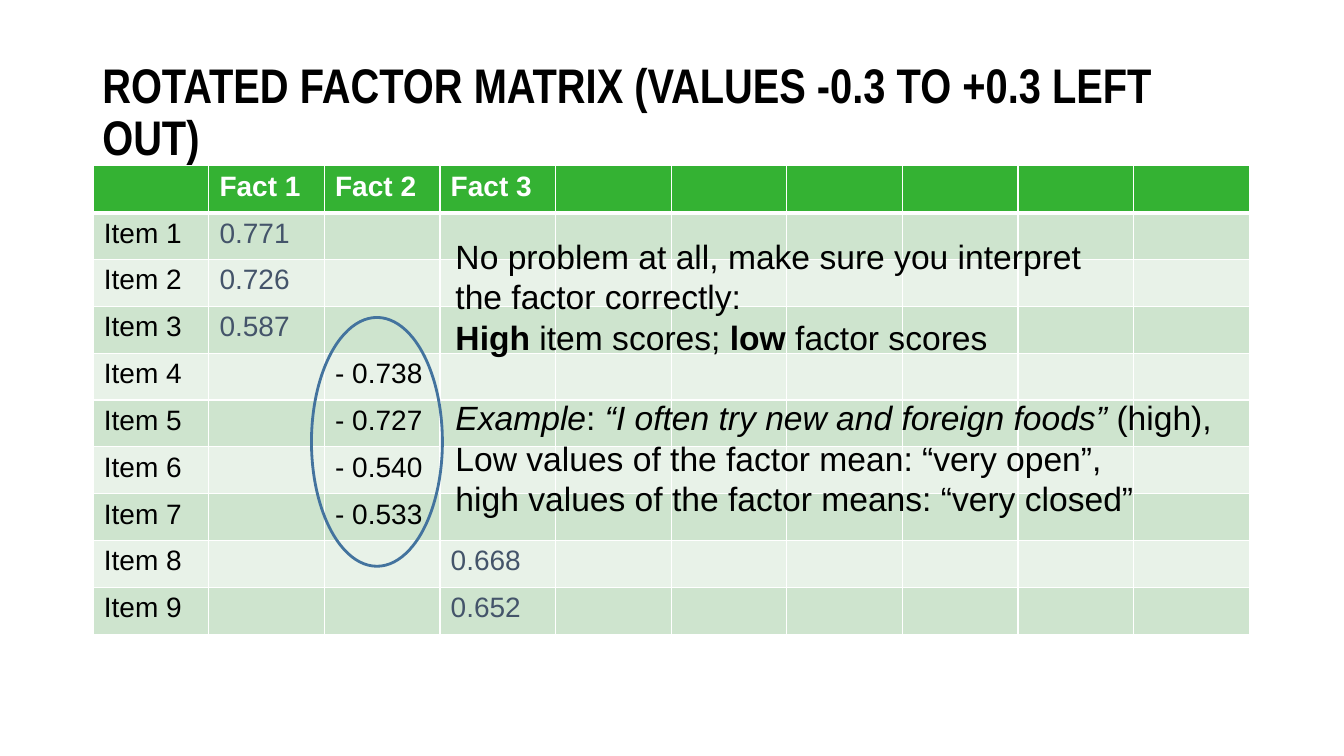
"""Builds the slide on a rotated factor matrix with a note on reading it."""
from lxml.etree import SubElement as Sub
from pptx import Presentation
from pptx.dml.color import RGBColor as RGB
from pptx.enum.shapes import MSO_SHAPE as Shape
from pptx.enum.text import MSO_ANCHOR as Anchor
from pptx.oxml import parse_xml
from pptx.oxml.ns import nsdecls, qn
from pptx.util import Cm, Pt

hues = {"black": "000000", "white": "FFFFFF", "head": "34B233", "odd": "CEE4CE",
        "even": "E8F2E8", "slate": "44546A", "ring": "43739E"}


def style(font, size, hue, bold=None, name="Arial"):
    font.size, font.bold, font.name = Pt(size), bold, name
    font.color.rgb = RGB.from_string(hues[hue])


def edge(cell, sides):
    props = cell._tc.get_or_add_tcPr()
    for spot, (side, width) in enumerate(sides.items()):
        line = parse_xml(f'<a:ln{side} {nsdecls("a")} w="{Pt(width)}"/>')
        fill = Sub(line, qn("a:solidFill"))
        Sub(fill, qn("a:srgbClr"), val=hues["white"])
        props.insert(spot, line)


deck = Presentation()
deck.slide_width, deck.slide_height = Cm(33.87), Cm(19.05)
slide = deck.slides.add_slide(deck.slide_layouts[6])
shapes = slide.shapes

title = shapes.add_textbox(Cm(2.33), Cm(1.01), Cm(29.21), Cm(3.68)).text_frame
title.word_wrap = True
title.vertical_anchor = Anchor.MIDDLE
para = title.paragraphs[0]
para.text = "ROTATED FACTOR MATRIX (VALUES -0.3 TO +0.3 LEFT OUT)"
para.line_spacing = Pt(37.5)
style(para.font, 34.7, "black", True, "Arial Narrow")

loads = [(1, "0.771"), (1, "0.726"), (1, "0.587"),
         (2, "- 0.738"), (2, "- 0.727"), (2, "- 0.540"), (2, "- 0.533"),
         (3, "0.668"), (3, "0.652")]
texts = {(0, col): f"Fact {col}" for col in (1, 2, 3)}
for row, (col, load) in enumerate(loads, 1):
    texts[row, 0] = f"Item {row}"
    texts[row, col] = load

count = 10
grid = shapes.add_table(count, count, Cm(2.35), Cm(4.18), Cm(29.13), Cm(11.75)).table
for row in range(count):
    grid.rows[row].height = Cm(1.18)
    back = "head" if row == 0 else "odd" if row % 2 else "even"
    for col in range(count):
        cell = grid.cell(row, col)
        cell.fill.solid()
        cell.fill.fore_color.rgb = RGB.from_string(hues[back])
        cell.margin_left = cell.margin_right = Cm(0.27)
        edge(cell, {"L": 1, "R": 1, "T": 3 if row == 1 else 1, "B": 3 if row == 0 else 1})
        cell.text = texts.get((row, col), "")
        hue = "white" if row == 0 else "slate" if col in (1, 3) else "black"
        style(cell.text_frame.paragraphs[0].font, 20, hue, row == 0)

ring = shapes.add_shape(Shape.OVAL, Cm(7.85), Cm(8), Cm(3.3), Cm(6.27))
ring.shadow.inherit = False
ring.fill.background()
ring.line.color.rgb = RGB.from_string(hues["ring"])
ring.line.width = Pt(2)

notes = [
    [("No problem at all, make sure you interpret\vthe factor correctly:", "")],
    [("High", "b"), (" item scores; ", ""), ("low", "b"), (" factor scores", "")],
    [("Example", "i"), (": ", ""), ("“I often try new and foreign foods”", "i"), (" (high),", "")],
    [("Low values of the factor mean: “very open”,", "")],
    [("high values of the factor means: “very closed”", "")],
]
pitch = Pt(28.8)
frame = shapes.add_textbox(Cm(11.23), Cm(5.82), Cm(19.76), Cm(8.46)).text_frame
frame.word_wrap = True
for spot, parts in enumerate(notes):
    para = frame.add_paragraph() if spot else frame.paragraphs[0]
    para.line_spacing = pitch
    if spot == 2:
        para.space_before = pitch
    style(para.font, 24, "black")
    for words, look in parts:
        for turn, line in enumerate(words.split("\v")):
            if turn:
                para.add_line_break()
            run = para.add_run()
            run.text = line
            if look == "b":
                run.font.bold = True
            if look == "i":
                run.font.italic = True

deck.save("out.pptx")
